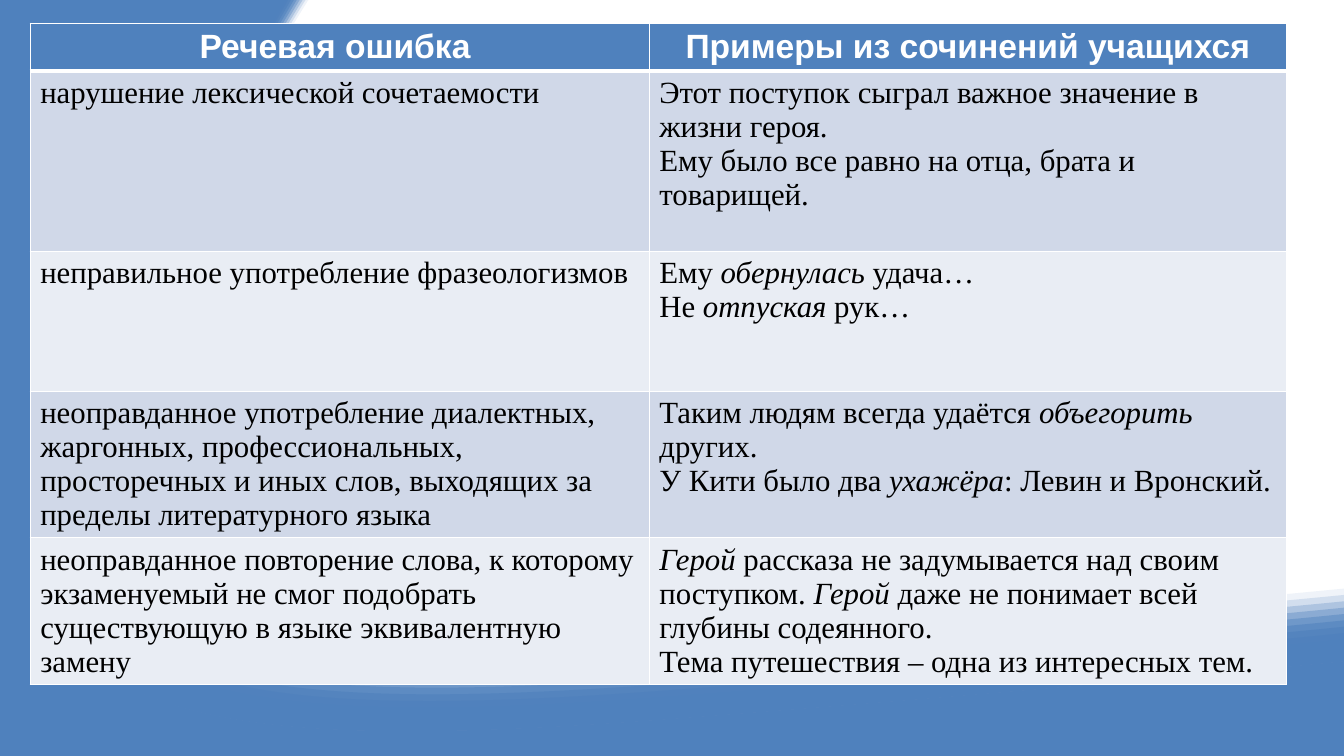
from dataclasses import dataclass

from lxml import etree
from pptx import Presentation
from pptx.dml.color import RGBColor
from pptx.enum import text
from pptx.oxml import ns
from pptx.util import Inches, Pt

Point = tuple[float, float]


@dataclass(frozen=True)
class Theme:
    blue: str = "4F81BD"
    white: str = "FFFFFF"
    black: str = "000000"
    band_dark: str = "D0D8E8"
    band_light: str = "E9EDF4"
    head_font: str = "Arial"
    body_font: str = "Times New Roman"
    head_size: int = 24
    body_size: int = 22
    thin_line: int = 1
    thick_line: int = 3


@dataclass(frozen=True)
class TableRow:
    """Each cell is a list of paragraphs; asterisks enclose italics."""
    height: float
    error: list[str]
    examples: list[str]
    is_head: bool = False


THEME = Theme()
SLIDE_W, SLIDE_H = 13.33, 7.5
CORNERS = [(0, 0), (0, SLIDE_H), (SLIDE_W, SLIDE_H), (SLIDE_W, 0)]
WAVE_COUNT = 11
COLUMN_WIDTHS = (6.14, 6.32)

# Curve points: each start is followed by groups of two controls and an end.
BASE_CURVE = [(13.33, 6.56), (13.33, 6.56), (10.75, 6.82), (6.55, 7.14),
              (1.06, 7.55), (-1.62, 7.12), (1.96, 1.15),
              (2.4, 0.41), (2.65, 0), (2.65, 0)]
OUTER_CURVE = [(13.33, 5.84), (13.31, 5.84), (10.85, 6.09), (6.9, 6.38),
               (1.61, 6.78), (-0.73, 6.32), (2.4, 1.09),
               (2.81, 0.4), (3.05, 0.01), (3.06, 0)]
INNER_CURVE = [(13.33, 6.47), (12.99, 6.51), (10.48, 6.75), (6.64, 7.04),
               (1.22, 7.45), (-1.42, 7.03), (2.11, 1.14),
               (2.48, 0.52), (2.71, 0.11), (2.77, 0)]

ROWS = [
    TableRow(0.47, ["Речевая ошибка "], ["Примеры из сочинений учащихся"], True),
    TableRow(1.79, ["нарушение лексической сочетаемости"],
             ["Этот поступок сыграл важное значение в жизни героя.",
              "Ему было все равно на отца, брата и товарищей."]),
    TableRow(1.39, ["неправильное употребление фразеологизмов"],
             ["Ему *обернулась* удача…", "Не *отпуская* рук…"]),
    TableRow(1.45, ["неоправданное употребление диалектных, жаргонных, "
                    "профессиональных, просторечных и иных слов, выходящих "
                    "за пределы литературного языка"],
             ["Таким людям всегда удаётся *объегорить* других.",
              "У Кити было два *ухажёра*: Левин и Вронский."]),
    TableRow(1.46, ["неоправданное повторение слова, к которому экзаменуемый "
                    "не смог подобрать существующую в языке эквивалентную замену"],
             ["*Герой* рассказа не задумывается над своим поступком. "
              "*Герой* даже не понимает всей глубины содеянного.",
              "Тема путешествия – одна из интересных тем."]),
]


def mix(a: Point, b: Point, t: float) -> Point:
    return a[0] + (b[0] - a[0]) * t, a[1] + (b[1] - a[1]) * t


def add_segment(outline, kind: str, points: list[Point]) -> None:
    segment = etree.SubElement(outline, ns.qn(f"a:{kind}"))
    for x, y in points:
        etree.SubElement(segment, ns.qn("a:pt"),
                         x=str(int(Inches(x))), y=str(int(Inches(y))))


def add_curve(outline, curve: list[Point]) -> None:
    for i in range(1, len(curve), 3):
        add_segment(outline, "cubicBezTo", curve[i:i + 3])


def add_wave(slide, edge: list[Point], back: list[Point],
             back_is_curved: bool, opacity: float = 1) -> None:
    """Fill the area between a curved edge and the way back to its start."""
    frame = [(Inches(x), Inches(y)) for x, y in CORNERS]
    builder = slide.shapes.build_freeform(*frame[0], scale=1.0)
    builder.add_line_segments(frame[1:], close=True)
    sp = builder.convert_to_shape()
    outline = sp.element.find(".//" + ns.qn("a:pathLst"))[0]
    for segment in list(outline):
        outline.remove(segment)
    add_segment(outline, "moveTo", edge[:1])
    add_curve(outline, edge)
    add_segment(outline, "lnTo", back[:1])
    if back_is_curved:
        add_curve(outline, back)
    else:
        for point in back[1:]:
            add_segment(outline, "lnTo", [point])
    add_segment(outline, "close", [])

    sp.shadow.inherit = False
    sp.fill.solid()
    sp.fill.fore_color.rgb = RGBColor.from_string(THEME.blue)
    sp.line.fill.background()
    if opacity < 1:
        color = sp.element.spPr.find(ns.qn("a:solidFill"))[0]
        etree.SubElement(color, ns.qn("a:alpha"), val=str(round(opacity * 100000)))


def add_background(slide) -> None:
    add_wave(slide, BASE_CURVE, CORNERS[:3], False)
    for i in range(WAVE_COUNT):
        t = i / (WAVE_COUNT - 1)
        edge = [mix(a, b, t) for a, b in zip(OUTER_CURVE, INNER_CURVE)]
        add_wave(slide, edge, BASE_CURVE[::-1], True, (i + 1) / WAVE_COUNT)


def set_borders(cell, top: int, bottom: int) -> None:
    tc_pr = cell._tc.get_or_add_tcPr()
    widths = {"L": THEME.thin_line, "R": THEME.thin_line, "T": top, "B": bottom}
    for i, (side, width) in enumerate(widths.items()):
        ln = etree.Element(ns.qn(f"a:ln{side}"), w=str(int(Pt(width))))
        fill = etree.SubElement(ln, ns.qn("a:solidFill"))
        etree.SubElement(fill, ns.qn("a:srgbClr"), val=THEME.white)
        tc_pr.insert(i, ln)


def write_cell(cell, paragraphs: list[str], is_head: bool) -> None:
    tf = cell.text_frame
    for i, line in enumerate(paragraphs):
        p = tf.add_paragraph() if i else tf.paragraphs[0]
        p.alignment = text.PP_ALIGN.CENTER if is_head else text.PP_ALIGN.LEFT
        for j, part in enumerate(line.split("*")):
            if not part:
                continue
            r = p.add_run()
            r.text = part
            r.font.name = THEME.head_font if is_head else THEME.body_font
            r.font.size = Pt(THEME.head_size if is_head else THEME.body_size)
            r.font.bold = is_head
            r.font.italic = j % 2 == 1
            r.font.color.rgb = RGBColor.from_string(
                THEME.white if is_head else THEME.black)


def add_error_table(slide) -> None:
    table = slide.shapes.add_table(
        len(ROWS), len(COLUMN_WIDTHS), Inches(0.3), Inches(0.23),
        Inches(sum(COLUMN_WIDTHS)), Inches(sum(row.height for row in ROWS))).table
    table.horz_banding = False
    for column, width in zip(table.columns, COLUMN_WIDTHS):
        column.width = Inches(width)
    for i, row in enumerate(ROWS):
        table.rows[i].height = Inches(row.height)
        band = THEME.band_dark if i % 2 else THEME.band_light
        for j, paragraphs in enumerate((row.error, row.examples)):
            cell = table.cell(i, j)
            cell.fill.solid()
            cell.fill.fore_color.rgb = RGBColor.from_string(
                THEME.blue if row.is_head else band)
            set_borders(cell,
                        THEME.thick_line if i == 1 else THEME.thin_line,
                        THEME.thick_line if row.is_head else THEME.thin_line)
            write_cell(cell, paragraphs, row.is_head)


def main() -> None:
    prs = Presentation()
    prs.slide_width, prs.slide_height = Inches(SLIDE_W), Inches(SLIDE_H)
    slide = prs.slides.add_slide(prs.slide_layouts[6])
    add_background(slide)
    add_error_table(slide)
    prs.save("out.pptx")


if __name__ == "__main__":
    main()
